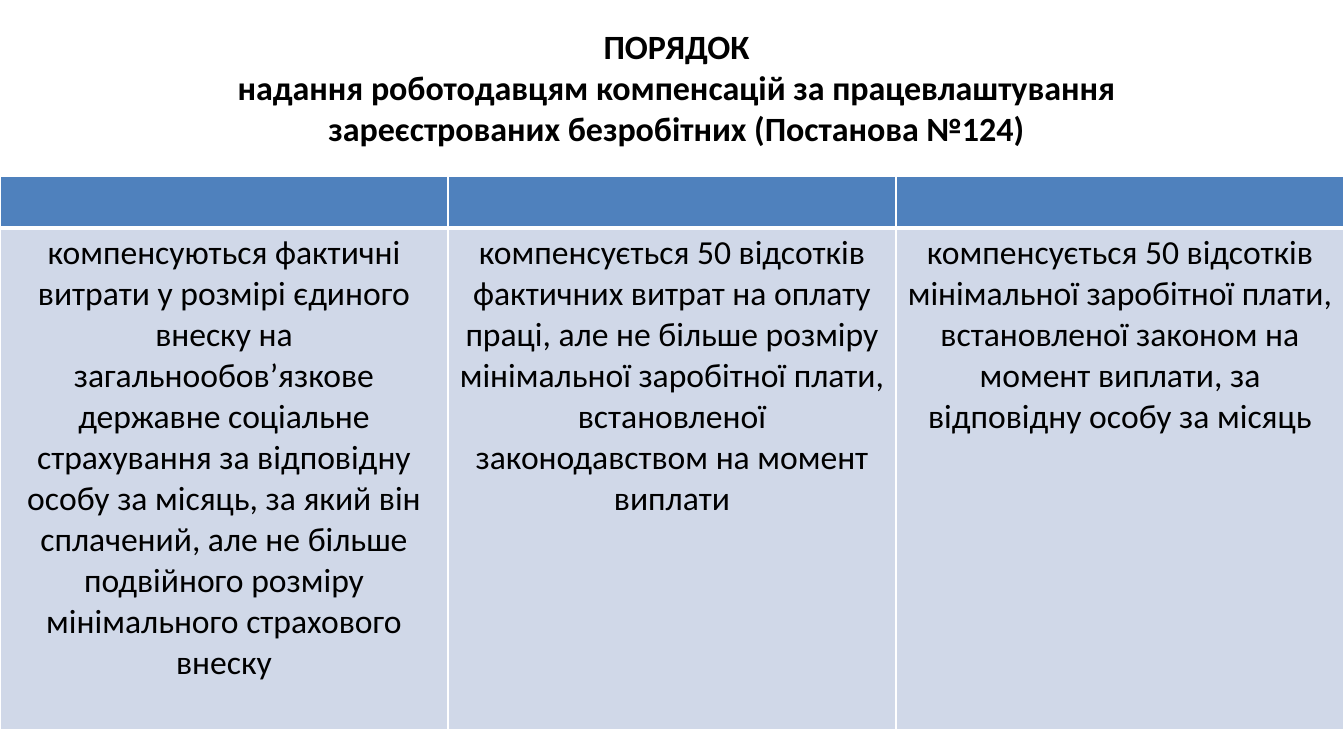
from lxml import etree
from pptx import Presentation
from pptx import util as u
from pptx.dml.color import RGBColor
from pptx.enum import text
from pptx.oxml import ns

WIDTH, HEIGHT = 13.33, 7.5
TABLE_TOP = 1.75
HEADER_HEIGHT, BODY_HEIGHT = 0.51, 4.98
HEADER_FILL, BODY_FILL, BORDER, INK = "4F81BD", "D0D8E8", "FFFFFF", "000000"

TITLE = ("ПОРЯДОК\vнадання роботодавцям компенсацій за працевлаштування "
         "зареєстрованих безробітних (Постанова №124)")
COMPENSATIONS = [
    "компенсуються фактичні витрати у розмірі єдиного внеску на "
    "загальнообов’язкове державне соціальне страхування за відповідну особу "
    "за місяць, за який він сплачений, але не більше подвійного розміру "
    "мінімального страхового внеску",
    "компенсується 50 відсотків фактичних витрат на оплату праці, але не "
    "більше розміру мінімальної заробітної плати, встановленої "
    "законодавством на момент виплати",
    "компенсується 50 відсотків мінімальної заробітної плати, встановленої "
    "законом на момент виплати, за відповідну особу за місяць",
]


def color(value):
    return RGBColor.from_string(value)


def write_centered(text_frame, content, size, bold=False):
    text_frame.text = content
    for paragraph in text_frame.paragraphs:
        paragraph.alignment = text.PP_ALIGN.CENTER
        for run in paragraph.runs:
            run.font.name = "Calibri"
            run.font.size = u.Pt(size)
            run.font.bold = bold
            run.font.color.rgb = color(INK)


def add_title(slide):
    box = slide.shapes.add_textbox(u.Inches(2.21), u.Inches(0.2),
                                   u.Inches(9), u.Inches(1.32))
    box.text_frame.word_wrap = True
    box.text_frame.vertical_anchor = text.MSO_ANCHOR.MIDDLE
    write_centered(box.text_frame, TITLE, 24.3, bold=True)


def set_borders(cell, **widths):
    """Draw the cell's edges, given as L, R, T, B widths in points."""
    properties = cell._tc.get_or_add_tcPr()
    for index, (side, width) in enumerate(widths.items()):
        line = etree.Element(ns.qn(f"a:ln{side}"), w=str(u.Pt(width)))
        fill = etree.SubElement(line, ns.qn("a:solidFill"))
        etree.SubElement(fill, ns.qn("a:srgbClr"), val=BORDER)
        properties.insert(index, line)


def fill_cell(cell, fill):
    cell.fill.solid()
    cell.fill.fore_color.rgb = color(fill)


def add_compensation_table(slide):
    table = slide.shapes.add_table(
        2, len(COMPENSATIONS), 0, u.Inches(TABLE_TOP), u.Inches(WIDTH),
        u.Inches(HEADER_HEIGHT + BODY_HEIGHT)).table
    table.first_row = table.horz_banding = False
    table.rows[0].height = u.Inches(HEADER_HEIGHT)
    table.rows[1].height = u.Inches(BODY_HEIGHT)
    for column, compensation in enumerate(COMPENSATIONS):
        header, body = table.cell(0, column), table.cell(1, column)
        fill_cell(header, HEADER_FILL)
        set_borders(header, L=1, R=1, T=1, B=3)
        fill_cell(body, BODY_FILL)
        set_borders(body, L=1, R=1, T=3, B=1)
        write_centered(body.text_frame, compensation, 24)


def main():
    presentation = Presentation()
    presentation.slide_width = u.Inches(WIDTH)
    presentation.slide_height = u.Inches(HEIGHT)
    slide = presentation.slides.add_slide(presentation.slide_layouts[6])
    add_title(slide)
    add_compensation_table(slide)
    presentation.save("out.pptx")


if __name__ == "__main__":
    main()
